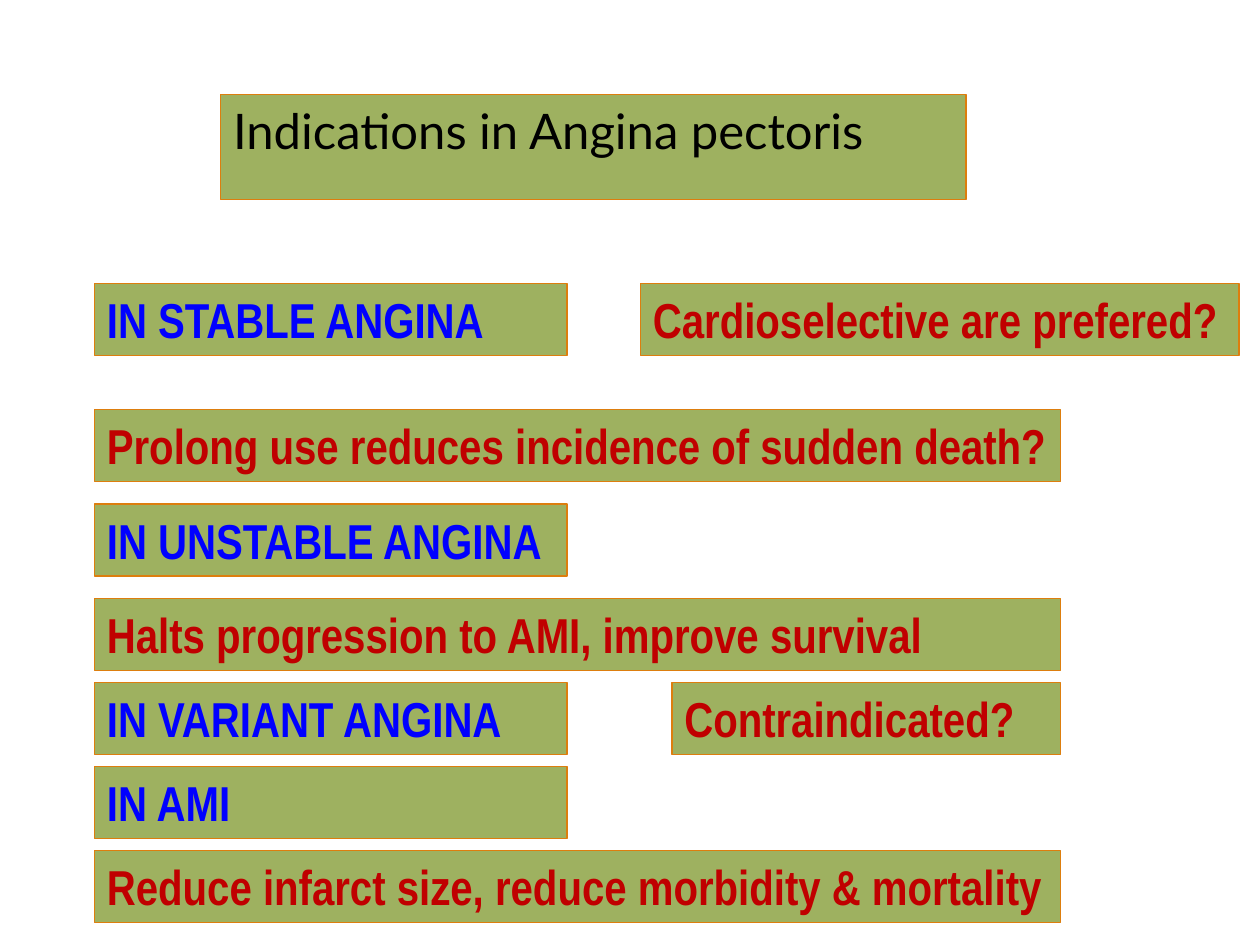
import pptx
import pptx.dml.color
import pptx.enum.shapes
import pptx.enum.text
import pptx.util

EMU_PER_PX = 9525  # 96 px to the inch
COLOURS = {
    "fill": "9EB160",
    "border": "DD7E0E",
    "title": "000000",
    "heading": "0000FF",
    "detail": "C00000",
}


def px(length):
    return pptx.util.Emu(length * EMU_PER_PX)


def colour(name):
    return pptx.dml.color.RGBColor.from_string(COLOURS[name])


class SlideBuilder:
    title_font = "Lato"
    body_font = "Arial Narrow"
    text_size = pptx.util.Pt(28)
    border_width = pptx.util.Pt(0.75)
    box_height = 55

    def __init__(self, slide):
        self.slide = slide

    def style(self, shape, text, font_name, text_colour, bold):
        shape.fill.solid()
        shape.fill.fore_color.rgb = colour("fill")
        shape.line.color.rgb = colour("border")
        shape.line.width = self.border_width

        text_frame = shape.text_frame
        text_frame.text = text
        text_frame.word_wrap = True
        text_frame.auto_size = pptx.enum.text.MSO_AUTO_SIZE.SHAPE_TO_FIT_TEXT
        text_frame.vertical_anchor = pptx.enum.text.MSO_ANCHOR.TOP
        paragraph = text_frame.paragraphs[0]
        paragraph.alignment = pptx.enum.text.PP_ALIGN.LEFT
        font = paragraph.runs[0].font
        font.name = font_name
        font.size = self.text_size
        font.bold = bold
        font.color.rgb = colour(text_colour)

    def title(self, text, left, top, width):
        shape = self.slide.shapes.title
        shape.left, shape.top = px(left), px(top)
        shape.width, shape.height = px(width), px(self.box_height)
        self.style(shape, text, self.title_font, "title", False)

    def box(self, text, left, top, width, text_colour):
        shape = self.slide.shapes.add_shape(
            pptx.enum.shapes.MSO_SHAPE.RECTANGLE,
            px(left), px(top), px(width), px(self.box_height))
        shape.shadow.inherit = False
        self.style(shape, text, self.body_font, text_colour, True)


def main():
    presentation = pptx.Presentation()
    presentation.slide_width, presentation.slide_height = px(960), px(720)
    title_only = presentation.slide_layouts[5]
    builder = SlideBuilder(presentation.slides.add_slide(title_only))

    # Title
    builder.title("Indications in Angina pectoris", 168, 72, 568)

    # Types of angina
    left, heading_width, detail_width = 72, 360, 736
    headings = [
        ("IN STABLE ANGINA", 216),
        ("IN UNSTABLE ANGINA", 384),
        ("IN VARIANT ANGINA", 520),
        ("IN AMI", 584),
    ]
    for text, top in headings:
        builder.box(text, left, top, heading_width, "heading")

    # Full-width effects
    effects = [
        ("Prolong use reduces incidence of sudden death?", 312),
        ("Halts progression to AMI, improve survival", 456),
        ("Reduce infarct size, reduce morbidity & mortality", 648),
    ]
    for text, top in effects:
        builder.box(text, left, top, detail_width, "detail")

    # Remarks beside the headings
    builder.box("Cardioselective are prefered?", 488, 216, 456, "detail")
    builder.box("Contraindicated?", 512, 520, 296, "detail")

    presentation.save("out.pptx")


if __name__ == "__main__":
    main()
